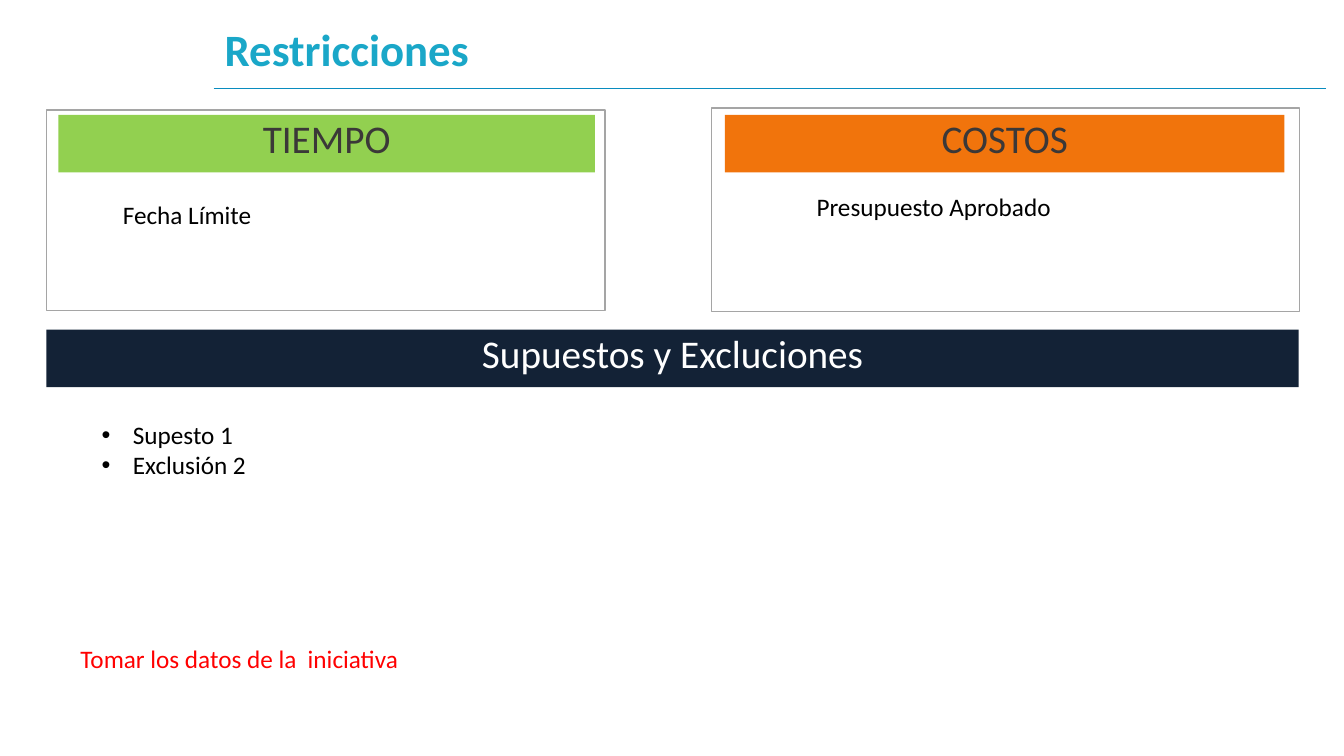
from dataclasses import dataclass
from typing import Optional

from lxml.etree import SubElement
from pptx import Presentation
from pptx.dml.color import RGBColor
from pptx.enum.shapes import MSO_CONNECTOR, MSO_SHAPE
from pptx.enum.text import MSO_ANCHOR as Anchor, MSO_AUTO_SIZE as AutoSize, PP_ALIGN as Align
from pptx.oxml.ns import qn
from pptx.slide import Slide
from pptx.util import Inches, Pt


@dataclass(frozen=True)
class Theme:
    font: str = "Calibri"
    title_size: int = 32
    banner_size: int = 28
    body_size: int = 18
    line_spacing: float = 0.9
    bullet_indent: float = 0.31
    title: str = "1AA7C8"
    rule: str = "098CBF"
    time: str = "92D050"
    costs: str = "F1740C"
    assumptions: str = "132236"
    dark_text: str = "3B3838"
    light_text: str = "FFFFFF"
    body_text: str = "000000"
    hint_text: str = "FF0000"
    frame: str = "A5A5A5"


THEME = Theme()


@dataclass(frozen=True)
class Box:
    left: float
    top: float
    width: float
    height: float

    def lengths(self) -> tuple[Inches, Inches, Inches, Inches]:
        return Inches(self.left), Inches(self.top), Inches(self.width), Inches(self.height)


@dataclass(frozen=True)
class Banner:
    text: str
    box: Box
    fill: str
    color: str = THEME.dark_text


@dataclass(frozen=True)
class Label:
    lines: tuple[str, ...]
    box: Box
    color: str = THEME.body_text
    size: int = THEME.body_size
    bold: bool = False
    bulleted: bool = False
    wrap: bool = False
    anchor: Anchor = Anchor.TOP
    line_spacing: Optional[float] = None


LABELS = (
    Label(("Restricciones",), Box(2.13, 0.23, 11.01, 0.57), THEME.title, THEME.title_size,
          bold=True, wrap=True, anchor=Anchor.MIDDLE, line_spacing=THEME.line_spacing),
    Label(("Tomar los datos de la  iniciativa",), Box(0.7, 6.33, 6.54, 0.4),
          THEME.hint_text, wrap=True),
    Label(("Fecha Límite",), Box(1.12, 1.93, 1.49, 0.4)),
    Label(("Presupuesto Aprobado",), Box(8, 1.85, 2.55, 0.4)),
    Label(("Supesto 1", "Exclusión 2"), Box(0.91, 4.11, 1.65, 0.71), bulleted=True),
)
BANNERS = (
    Banner("TIEMPO", Box(0.58, 1.14, 5.32, 0.57), THEME.time),
    Banner("COSTOS", Box(7.19, 1.14, 5.55, 0.57), THEME.costs),
    Banner("Supuestos y Excluciones", Box(0.46, 3.27, 12.42, 0.57),
           THEME.assumptions, THEME.light_text),
)
FRAMES = (Box(0.46, 1.09, 5.54, 1.99), Box(7.06, 1.07, 5.83, 2.02))


def style_paragraph(paragraph, size: int, color: str, bold: bool = False) -> None:
    font = paragraph.font
    font.name = THEME.font
    font.size = Pt(size)
    font.bold = bold
    font.color.rgb = RGBColor.from_string(color)


def add_bullet(paragraph) -> None:
    properties = paragraph._p.get_or_add_pPr()
    indent = Inches(THEME.bullet_indent)
    properties.set("marL", str(indent))
    properties.set("indent", str(-indent))
    SubElement(properties, qn("a:buFont")).set("typeface", "Arial")
    SubElement(properties, qn("a:buChar")).set("char", "•")


def add_title_rule(slide: Slide) -> None:
    rule = slide.shapes.add_connector(
        MSO_CONNECTOR.STRAIGHT, Inches(2.12), Inches(0.88), Inches(13.15), Inches(0.88))
    rule.line.color.rgb = RGBColor.from_string(THEME.rule)
    rule.line.width = Pt(0.5)
    SubElement(rule._element.spPr, qn("a:effectLst"))


def add_label(slide: Slide, label: Label) -> None:
    frame = slide.shapes.add_textbox(*label.box.lengths()).text_frame
    frame.word_wrap = label.wrap
    frame.auto_size = AutoSize.NONE if label.anchor == Anchor.MIDDLE else AutoSize.SHAPE_TO_FIT_TEXT
    frame.vertical_anchor = label.anchor
    frame.text = "\n".join(label.lines)
    for paragraph in frame.paragraphs:
        if label.line_spacing:
            paragraph.line_spacing = label.line_spacing
        if label.bulleted:
            add_bullet(paragraph)
        style_paragraph(paragraph, label.size, label.color, label.bold)


def add_banner(slide: Slide, banner: Banner) -> None:
    shape = slide.shapes.add_shape(MSO_SHAPE.RECTANGLE, *banner.box.lengths())
    shape.shadow.inherit = False
    shape.fill.solid()
    shape.fill.fore_color.rgb = RGBColor.from_string(banner.fill)
    shape.line.fill.background()
    frame = shape.text_frame
    frame.word_wrap = True
    frame.vertical_anchor = Anchor.TOP
    frame.text = banner.text
    paragraph = frame.paragraphs[0]
    paragraph.alignment = Align.CENTER
    paragraph.line_spacing = THEME.line_spacing
    style_paragraph(paragraph, THEME.banner_size, banner.color)


def add_frame(slide: Slide, box: Box) -> None:
    shape = slide.shapes.add_shape(MSO_SHAPE.RECTANGLE, *box.lengths())
    shape.shadow.inherit = False
    shape.fill.background()
    shape.line.color.rgb = RGBColor.from_string(THEME.frame)
    shape.line.width = Pt(1)


def main() -> None:
    presentation = Presentation()
    presentation.slide_width = Inches(13.33)
    presentation.slide_height = Inches(7.5)
    slide = presentation.slides.add_slide(presentation.slide_layouts[6])
    add_title_rule(slide)
    for banner in BANNERS:
        add_banner(slide, banner)
    for label in LABELS:
        add_label(slide, label)
    for box in FRAMES:
        add_frame(slide, box)
    presentation.save("out.pptx")


if __name__ == "__main__":
    main()
